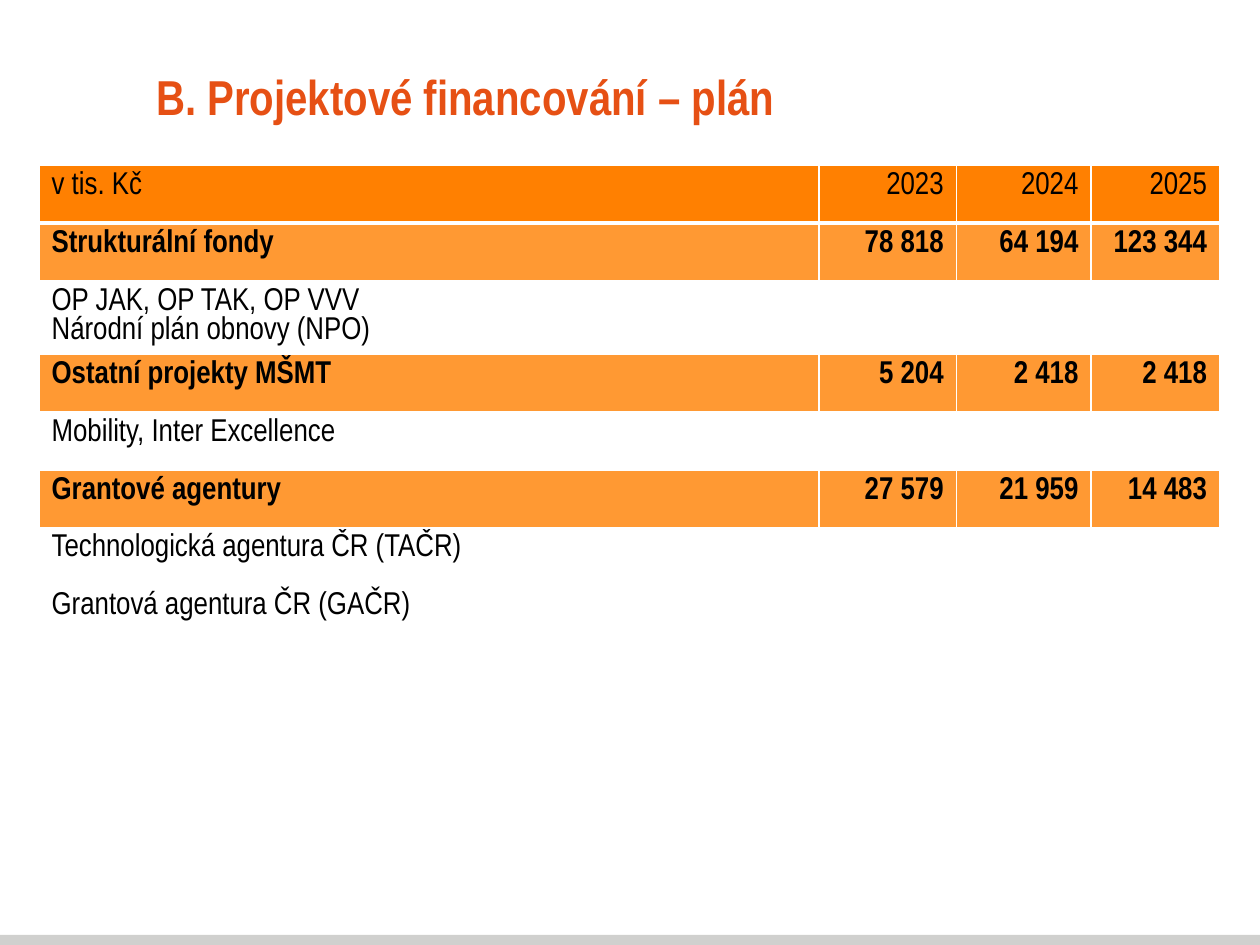
from lxml import etree
from pptx import Presentation
from pptx import util as u
from pptx.dml.color import RGBColor
from pptx.enum import shapes, text
from pptx.oxml.ns import qn

# Content: (kind, label lines, values by year)
TITLE = "B. Projektové financování – plán"
ROWS = [
    ("head", ["v tis. Kč"], ["2023", "2024", "2025"]),
    ("group", ["Strukturální fondy"], ["78 818", "64 194", "123 344"]),
    ("item", ["OP JAK, OP TAK, OP VVV", "Národní plán obnovy (NPO)"], []),
    ("group", ["Ostatní projekty MŠMT"], ["5 204", "2 418", "2 418"]),
    ("item", ["Mobility, Inter Excellence"], []),
    ("group", ["Grantové agentury"], ["27 579", "21 959", "14 483"]),
    ("item", ["Technologická agentura ČR (TAČR)"], []),
    ("item", ["Grantová agentura ČR (GAČR)"], []),
]

THEME = {
    "font": "Arial Narrow", "title": "E65014", "text": "000000",
    "line": "FFFFFF", "bar": "D0D0CE",
    "head": "FF8001", "group": "FF9933", "item": "FFFFFF",
    "title_size": 28, "text_size": 18, "thin": 1, "thick": 3,
}
WIDTHS = [6.19, 1.09, 1.07, 1.02]
ROW, TALL = 0.46, 0.58


def paint(fill, key):
    fill.solid()
    fill.fore_color.rgb = RGBColor.from_string(THEME[key])


def style(font, key, size, bold):
    form = {"name": THEME["font"], "size": u.Pt(THEME[size]), "bold": bold}
    for name, value in form.items():
        setattr(font, name, value)
    font.color.rgb = RGBColor.from_string(THEME[key])


def edge(cell, sides):
    """Draw cell borders; sides maps L, R, T, B to a width in points."""
    props = cell._tc.get_or_add_tcPr()
    for side, width in sides.items():
        line = etree.SubElement(props, qn(f"a:ln{side}"), w=str(u.Pt(width)))
        solid = etree.SubElement(line, qn("a:solidFill"))
        etree.SubElement(solid, qn("a:srgbClr"), val=THEME["line"])


def place(shape, left, top, width, height):
    box = {"left": left, "top": top, "width": width, "height": height}
    for name, value in box.items():
        setattr(shape, name, u.Inches(value))


def add_title(slide):
    title = slide.shapes.title
    place(title, 1.14, 0.36, 8.11, 0.81)
    frame = title.text_frame
    frame.text = TITLE
    frame.vertical_anchor = text.MSO_ANCHOR.MIDDLE
    para = frame.paragraphs[0]
    para.alignment = text.PP_ALIGN.LEFT
    props = para._p.get_or_add_pPr()
    props.set("marL", str(u.Inches(0.2)))
    props.set("indent", str(u.Inches(-0.2)))
    style(para.runs[0].font, "title", "title_size", True)


def add_grid(slide):
    highs = [TALL if len(label) > 1 else ROW for _, label, _ in ROWS]
    grid = slide.shapes.add_table(
        len(ROWS), len(WIDTHS), u.Inches(0.31), u.Inches(1.31),
        u.Inches(sum(WIDTHS)), u.Inches(sum(highs))).table
    for col, width in zip(grid.columns, WIDTHS):
        col.width = u.Inches(width)
    for r, (kind, label, values) in enumerate(ROWS):
        grid.rows[r].height = u.Inches(highs[r])
        parts = ["\n".join(label)] + (values or [""] * (len(WIDTHS) - 1))
        thin, thick = THEME["thin"], THEME["thick"]
        sides = {"L": thin, "R": thin,
                 "T": thick if r == 1 else thin,
                 "B": thick if r == 0 else thin}
        for c, part in enumerate(parts):
            cell = grid.cell(r, c)
            edge(cell, sides)
            paint(cell.fill, kind)
            cell.text = part
            for para in cell.text_frame.paragraphs:
                para.alignment = text.PP_ALIGN.RIGHT if c else text.PP_ALIGN.LEFT
                for run in para.runs:
                    style(run.font, "text", "text_size", kind == "group")


def main():
    deck = Presentation()
    deck.slide_width, deck.slide_height = u.Inches(10), u.Inches(7.5)
    slide = deck.slides.add_slide(deck.slide_layouts[5])

    # Bottom bar
    bar = slide.shapes.add_shape(
        shapes.MSO_SHAPE.RECTANGLE, 0, u.Inches(7.42), u.Inches(10), u.Inches(0.08))
    bar.shadow.inherit = False
    bar.line.fill.background()
    paint(bar.fill, "bar")

    add_title(slide)
    add_grid(slide)
    deck.save("out.pptx")


if __name__ == "__main__":
    main()
